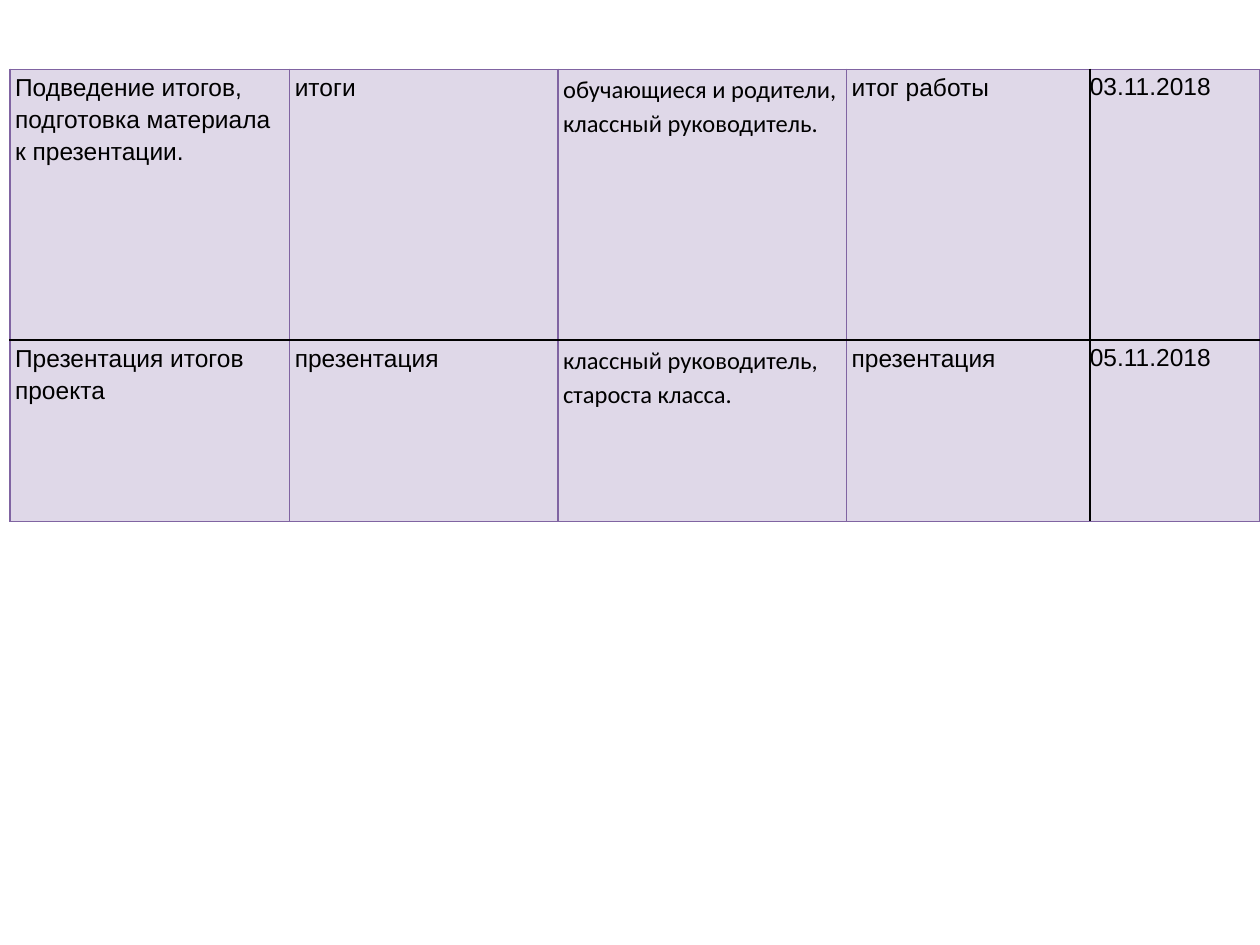
from lxml import etree
from pptx import Presentation, util as u
from pptx.dml import color
from pptx.oxml import ns

COLORS = {"fill": "DFD8E8", "purple": "8064A2", "black": "000000"}
COLUMN_WIDTHS = [2.22, 2.13, 2.29, 1.93, 1.35]
ROW_HEIGHTS = [2.15, 1.44]
COLUMN_FONTS = ["Arial", "Arial", "Calibri", "Arial", "Arial"]
ROWS = [
    ["Подведение итогов, подготовка материала к презентации.", "итоги",
     "обучающиеся и родители, классный руководитель.", "итог работы", "03.11.2018"],
    ["Презентация итогов проекта", "презентация",
     "классный руководитель, староста класса.", "презентация", "05.11.2018"],
]
DATE_COLUMN = len(COLUMN_WIDTHS) - 1


def rgb(name):
    return color.RGBColor.from_string(COLORS[name])


def set_border(cell, side, name):
    properties = cell._tc.get_or_add_tcPr()
    line = etree.SubElement(properties, ns.qn(f"a:ln{side}"), w=str(u.Pt(1)))
    fill = etree.SubElement(line, ns.qn("a:solidFill"))
    etree.SubElement(fill, ns.qn("a:srgbClr"), val=COLORS[name])


def border_colors(row, column):
    return {
        "L": "black" if column == DATE_COLUMN else "purple",
        "R": "black" if column == DATE_COLUMN - 1 else "purple",
        "T": "black" if row > 0 else "purple",
        "B": "black" if row < len(ROWS) - 1 else "purple",
    }


def style_cell(cell, row, column):
    is_date = column == DATE_COLUMN
    cell.margin_left = cell.margin_right = u.Inches(0 if is_date else 0.04)
    cell.margin_top = u.Inches(0 if is_date else 0.01)
    cell.margin_bottom = u.Inches(0)
    for side, name in border_colors(row, column).items():
        set_border(cell, side, name)
    cell.fill.solid()
    cell.fill.fore_color.rgb = rgb("fill")
    cell.text_frame.text = ROWS[row][column]
    paragraph = cell.text_frame.paragraphs[0]
    paragraph.line_spacing = 1.15
    if is_date:
        paragraph.space_after = u.Pt(10)
    font = paragraph.runs[0].font
    font.name = COLUMN_FONTS[column]
    font.size = u.Pt(14)
    font.color.rgb = rgb("black")


def add_schedule(slide, left, top, width, height):
    table = slide.shapes.add_table(
        len(ROWS), len(COLUMN_WIDTHS), left, top, width, height).table
    table.first_row = table.horz_banding = False
    for column, share in zip(table.columns, COLUMN_WIDTHS):
        column.width = int(width * share / sum(COLUMN_WIDTHS))
    for row, share in zip(table.rows, ROW_HEIGHTS):
        row.height = int(height * share / sum(ROW_HEIGHTS))
    for row in range(len(ROWS)):
        for column in range(len(COLUMN_WIDTHS)):
            style_cell(table.cell(row, column), row, column)


def main():
    presentation = Presentation()
    presentation.slide_width = u.Inches(10)
    presentation.slide_height = u.Inches(7.5)
    slide = presentation.slides.add_slide(presentation.slide_layouts[6])
    add_schedule(slide, u.Inches(0.08), u.Inches(0.55), u.Inches(9.92), u.Inches(3.59))
    presentation.save("out.pptx")


if __name__ == "__main__":
    main()
